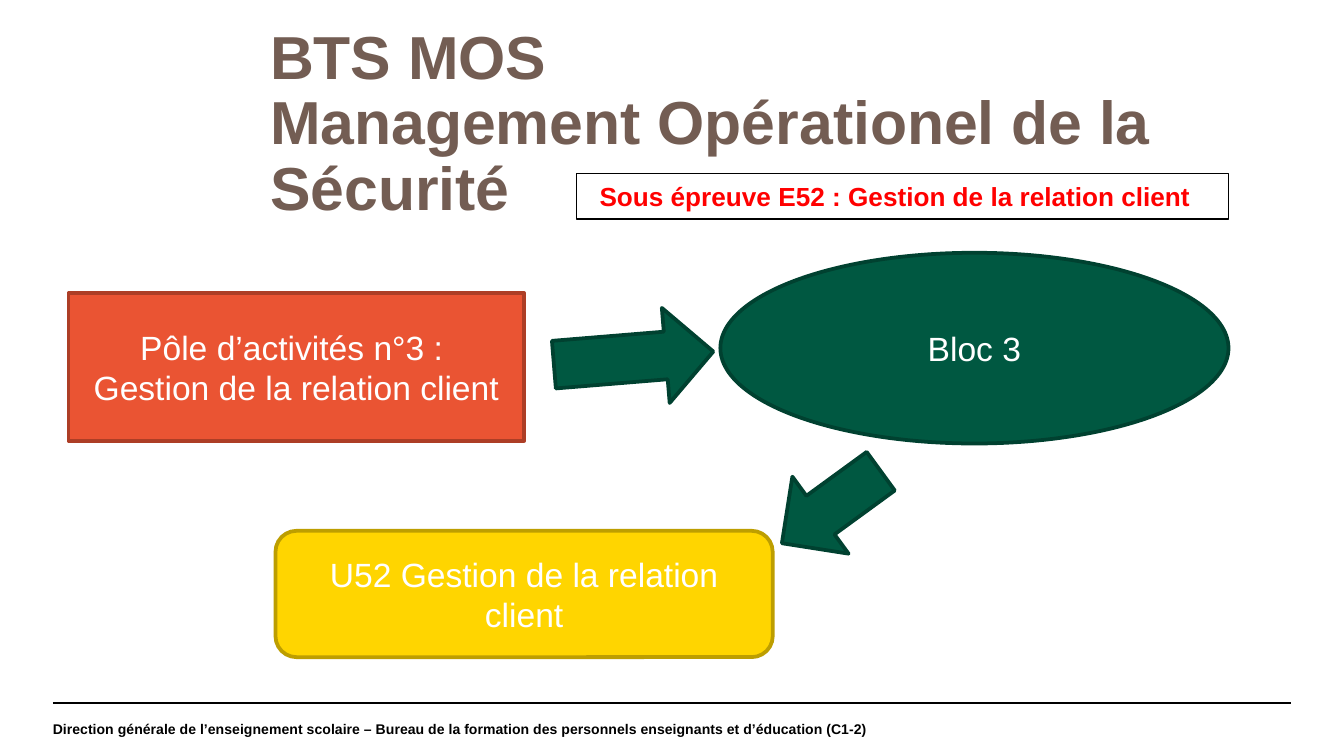
from pptx import Presentation
from pptx.dml.color import RGBColor
from pptx.enum.shapes import MSO_CONNECTOR, MSO_SHAPE as Shape
from pptx.enum.text import MSO_ANCHOR as Anchor, MSO_AUTO_SIZE as AutoSize, PP_ALIGN as Align
from pptx.oxml.ns import qn
from pptx.util import Pt

BLACK = RGBColor(0x00, 0x00, 0x00)
WHITE = RGBColor(0xFF, 0xFF, 0xFF)
BROWN = RGBColor(0x73, 0x5D, 0x53)
RED = RGBColor(0xFF, 0x00, 0x00)
ORANGE = RGBColor(0xEA, 0x54, 0x33)
DARK_ORANGE = RGBColor(0xAD, 0x3E, 0x26)
GREEN = RGBColor(0x00, 0x58, 0x41)
DARK_GREEN = RGBColor(0x00, 0x41, 0x30)
YELLOW = RGBColor(0xFF, 0xD5, 0x00)
DARK_YELLOW = RGBColor(0xBD, 0x9E, 0x00)

TITLE = "BTS MOS\nManagement Opérationel de la Sécurité"
SUBTITLE = "Sous épreuve E52 : Gestion de la relation client"
FOOTER = ("Direction générale de l’enseignement scolaire – Bureau de la formation "
          "des personnels enseignants et d’éducation (C1-2)")

BLOCKS = [
    (Shape.RECTANGLE, (36.7, 157, 244.1, 79.2), ORANGE, DARK_ORANGE,
     "Pôle d’activités n°3 : \nGestion de la relation client"),
    (Shape.OVAL, (385.9, 135.4, 272.2, 102.2), GREEN, DARK_GREEN, "Bloc 3"),
    (Shape.ROUNDED_RECTANGLE, (147.6, 284.4, 266.4, 67.7), YELLOW, DARK_YELLOW,
     "U52 Gestion de la relation client"),
]
ARROWS = [
    ((419.8, 239, 51.1, 65.5), 53.9),
    ((313.9, 149, 51.1, 85.7), 265.3),
]

deck = Presentation()
deck.slide_width, deck.slide_height = Pt(720), Pt(405)
page = deck.slides.add_slide(deck.slide_layouts[5])


def write(box, text, size, color, bold=False, align=Align.LEFT, anchor=Anchor.MIDDLE,
          margin=None, line_spacing=None):
    frame = box.text_frame
    frame.text = text
    frame.word_wrap = True
    frame.auto_size = AutoSize.NONE
    frame.vertical_anchor = anchor
    if margin is not None:
        frame.margin_left = frame.margin_right = Pt(margin)
        frame.margin_top = frame.margin_bottom = Pt(margin)
    for para in frame.paragraphs:
        para.alignment = align
        if line_spacing:
            para.line_spacing = line_spacing
        for span in para.runs:
            span.font.name = "Arial"
            span.font.size = Pt(size)
            span.font.bold = bold
            span.font.color.rgb = color


def add_block(kind, place, fill, outline, width=2):
    block = page.shapes.add_shape(kind, *map(Pt, place))
    block.shadow.inherit = False
    if fill is None:
        block.fill.background()
    else:
        block.fill.solid()
        block.fill.fore_color.rgb = fill
    block.line.color.rgb = outline
    block.line.width = Pt(width)
    return block


rule = page.shapes.add_connector(MSO_CONNECTOR.STRAIGHT, Pt(28.3), Pt(376.6), Pt(691.7), Pt(376.6))
rule.line.color.rgb = BLACK
rule.line.width = Pt(0.8)
properties = rule.element.spPr
properties.append(properties.makeelement(qn("a:effectLst"), {}))

footer = page.shapes.add_textbox(Pt(28.3), Pt(376.6), Pt(671.8), Pt(28.1))
write(footer, FOOTER, 7.5, BLACK, bold=True, margin=0)

title = page.shapes.title
title.left, title.top, title.width, title.height = map(Pt, (144.7, 14.4, 538.6, 103))
write(title, TITLE, 32.5, BROWN, bold=True, anchor=Anchor.TOP, margin=0, line_spacing=0.9)

for kind, place, fill, outline, text in BLOCKS:
    write(add_block(kind, place, fill, outline), text, 18, WHITE, align=Align.CENTER)

for place, angle in ARROWS:
    add_block(Shape.DOWN_ARROW, place, GREEN, DARK_GREEN).rotation = angle

subtitle = add_block(Shape.RECTANGLE, (308.9, 92.9, 349.2, 24.5), None, BLACK, 0.75)
write(subtitle, SUBTITLE, 14, RED, bold=True, align=Align.CENTER)
subtitle.text_frame.margin_right = Pt(15)

deck.save("out.pptx")
